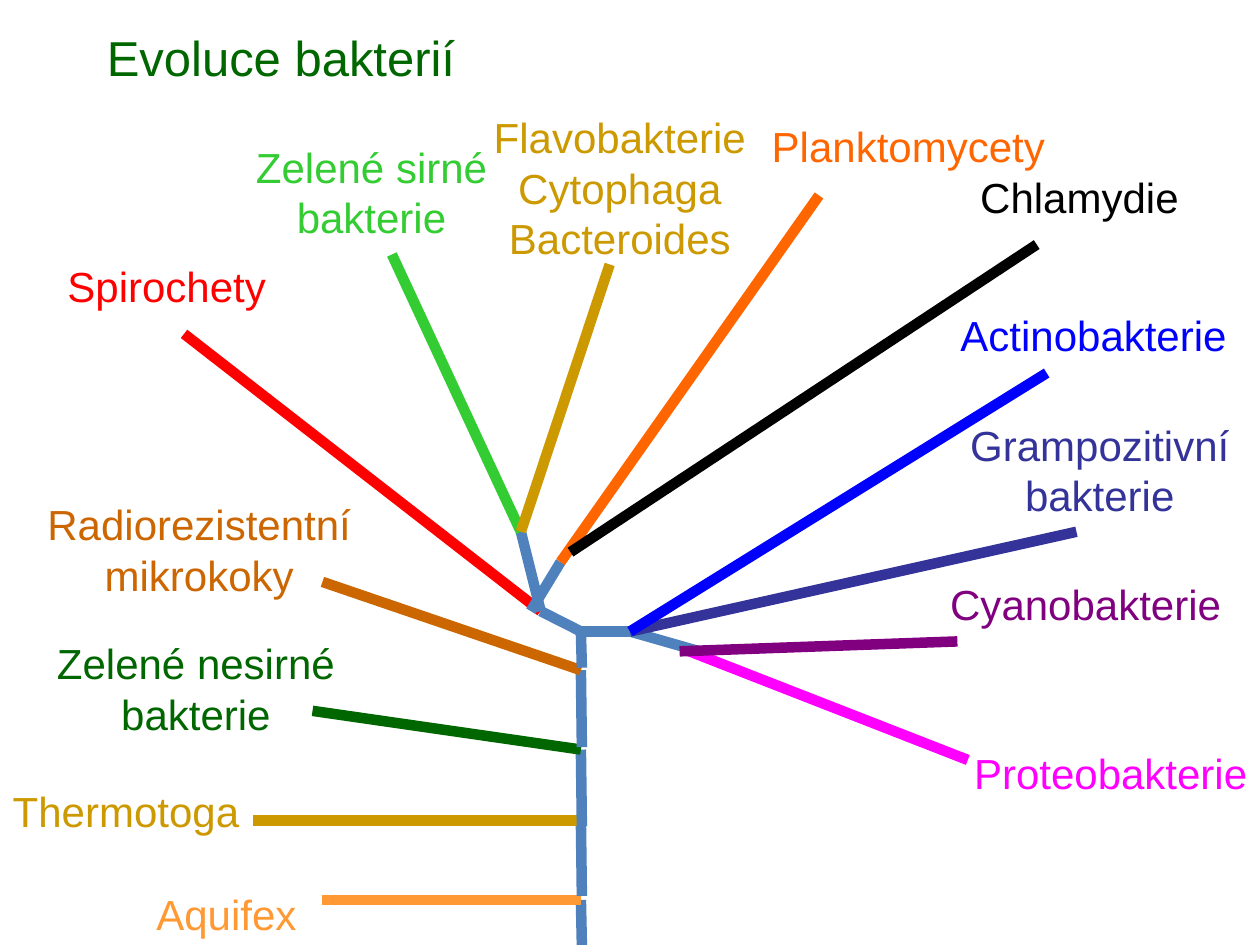
from pptx import Presentation
from pptx.dml.color import RGBColor
from pptx.enum.shapes import MSO_CONNECTOR
from pptx.enum.text import MSO_ANCHOR, MSO_AUTO_SIZE, PP_ALIGN
from pptx.oxml.ns import qn
from pptx.util import Cm, Pt
from lxml.etree import SubElement

COLORS = {
    "trunk": "4F81BD",
    "amber": "FF9933",
    "ochre": "CC9900",
    "dark green": "006600",
    "brown": "CC6600",
    "red": "FF0000",
    "green": "33CC33",
    "orange": "FF6600",
    "black": "000000",
    "magenta": "FF00FF",
    "indigo": "333399",
    "purple": "800080",
    "blue": "0000FF",
}

BRANCHES = [
    ("trunk", 11.73, 19.05, 11.71, 18.14),
    ("amber", 11.71, 18.14, 6.5, 18.14),
    ("trunk", 11.73, 18.06, 11.71, 16.54),
    ("ochre", 11.71, 16.54, 5.11, 16.54),
    ("trunk", 11.73, 16.66, 11.71, 15.11),
    ("dark green", 11.71, 15.11, 6.3, 14.33),
    ("trunk", 11.73, 15.06, 11.71, 13.51),
    ("brown", 11.71, 13.51, 6.5, 11.73),
    ("trunk", 11.73, 13.46, 11.71, 12.73),
    ("trunk", 12.9, 12.73, 11.71, 12.73),
    ("trunk", 11.71, 12.73, 10.9, 12.32),
    ("red", 10.9, 12.32, 3.71, 6.73),
    ("trunk", 10.9, 12.32, 10.5, 10.72),
    ("trunk", 10.7, 12.32, 11.3, 11.33),
    ("green", 10.5, 10.72, 7.9, 5.13),
    ("ochre", 10.5, 10.72, 12.29, 5.33),
    ("orange", 11.3, 11.33, 16.51, 3.94),
    ("black", 11.5, 11.13, 20.9, 4.93),
    ("trunk", 14.1, 13.13, 12.7, 12.73),
    ("magenta", 19.51, 15.32, 13.9, 13.13),
    ("indigo", 21.7, 10.72, 12.7, 12.73),
    ("purple", 19.3, 12.93, 13.7, 13.13),
    ("blue", 21.1, 7.52, 12.7, 12.73),
]

LABELS = [
    ("Aquifex", "amber", 2.9, 17.78, 3.33),
    ("Thermotoga", "ochre", 0, 15.72, 5.08),
    ("Zelené nesirné\nbakterie", "dark green", 0.89, 12.73, 6.12),
    ("Radiorezistentní\nmikrokoky", "brown", 0.7, 9.93, 6.63),
    ("Spirochety", "red", 1.1, 5.13, 4.52),
    ("Zelené sirné\nbakterie", "green", 4.9, 2.72, 5.18),
    ("Planktomycety", "orange", 15.3, 2.31, 6.02),
    ("Chlamydie", "black", 19.5, 3.33, 4.52),
    ("Grampozitivní\nbakterie", "indigo", 19.3, 8.33, 5.74),
    ("Proteobakterie", "magenta", 19.38, 14.94, 6.02),
    ("Flavobakterie\nCytophaga\nBacteroides", "ochre", 9.7, 2.13, 5.59),
    ("Cyanobakterie", "purple", 18.9, 11.53, 5.97),
    ("Actinobakterie", "blue", 19.1, 6.12, 5.89),
]


def format_paragraph(paragraph, size, color, alignment):
    paragraph.alignment = alignment
    paragraph.font.name = "Arial"
    paragraph.font.size = Pt(size)
    paragraph.font.color.rgb = RGBColor.from_string(COLORS[color])


presentation = Presentation()
presentation.slide_width = Cm(25.4)
presentation.slide_height = Cm(19.05)
slide = presentation.slides.add_slide(presentation.slide_layouts[5])

title = slide.shapes.title
title.left, title.top, title.width, title.height = Cm(1.9), Cm(0), Cm(21.6), Cm(2.31)
title.text_frame.text = "Evoluce bakterií"
title.text_frame.vertical_anchor = MSO_ANCHOR.MIDDLE
format_paragraph(title.text_frame.paragraphs[0], 28, "dark green", PP_ALIGN.LEFT)

for color, *ends in BRANCHES:
    branch = slide.shapes.add_connector(MSO_CONNECTOR.STRAIGHT, *map(Cm, ends))
    branch.line.color.rgb = RGBColor.from_string(COLORS[color])
    branch.line.width = Pt(6)
    SubElement(branch._element.spPr, qn("a:effectLst"))

for text, color, left, top, width in LABELS:
    height = 0.25 + 1.02 * (text.count("\n") + 1)
    label = slide.shapes.add_textbox(Cm(left), Cm(top), Cm(width), Cm(height))
    label.text_frame.word_wrap = False
    label.text_frame.auto_size = MSO_AUTO_SIZE.SHAPE_TO_FIT_TEXT
    label.text_frame.text = text
    for paragraph in label.text_frame.paragraphs:
        format_paragraph(paragraph, 24, color, PP_ALIGN.CENTER)

presentation.save("out.pptx")
